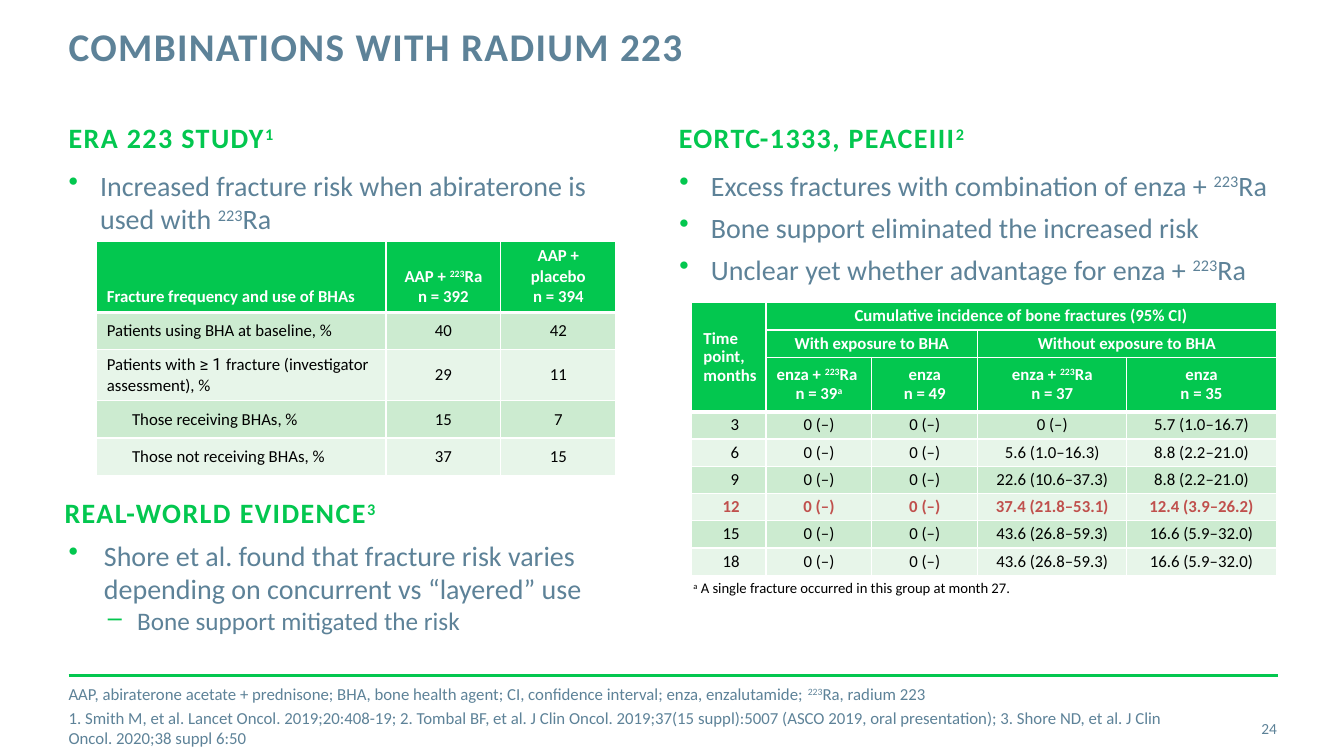
"""Build the slide on combinations with radium 223."""
from lxml import etree
from pptx import Presentation
from pptx.dml.color import RGBColor
from pptx.enum.shapes import MSO_CONNECTOR
from pptx.enum.text import MSO_ANCHOR, PP_ALIGN
from pptx.oxml.ns import qn
from pptx.util import Pt

GREEN = RGBColor(0x03, 0xC7, 0x4F)
SLATE = RGBColor(0x5D, 0x82, 0x98)
RED = RGBColor(0xC0, 0x50, 0x4D)
WHITE = RGBColor(0xFF, 0xFF, 0xFF)
BLACK = RGBColor(0, 0, 0)
BANDS = (RGBColor(0xCC, 0xEB, 0xD0), RGBColor(0xE7, 0xF5, 0xE9))
LEFT, CENTER, RIGHT = PP_ALIGN.LEFT, PP_ALIGN.CENTER, PP_ALIGN.RIGHT
TOP, MIDDLE, BOTTOM = MSO_ANCHOR.TOP, MSO_ANCHOR.MIDDLE, MSO_ANCHOR.BOTTOM
STRAIGHT = MSO_CONNECTOR.STRAIGHT

ERA_ROWS = [
    ["Fracture frequency and use of BHAs", "AAP + |^223|Ra\nn = 392", "AAP + placebo\nn = 394"],
    ["Patients using BHA at baseline, %", "40", "42"],
    ["Patients with |≥ 1 |fracture (investigator assessment), %", "29", "11"],
    ["Those receiving BHAs, %", "15", "7"],
    ["Those not receiving BHAs, %", "37", "15"],
]
NONE = "0 (–)"
PEACE_ROWS = [
    ["Time point, months", "Cumulative incidence of bone fractures (95% CI)", "", "", ""],
    ["", "With exposure to BHA", "", "Without exposure to BHA", ""],
    ["", "enza + |^223|Ra |\v|n = 39|^a", "enza|\v|n = 49",
     "enza + |^223|Ra|\v|n = 37", "enza|\v|n = 35"],
    ["3", NONE, NONE, NONE, "5.7 (1.0–16.7)"],
    ["6", NONE, NONE, "5.6 (1.0–16.3)", "8.8 (2.2–21.0)"],
    ["9", NONE, NONE, "22.6 (10.6–37.3)", "8.8 (2.2–21.0)"],
    ["12", NONE, NONE, "37.4 (21.8–53.1)", "12.4 (3.9–26.2)"],
    ["15", NONE, NONE, "43.6 (26.8–59.3)", "16.6 (5.9–32.0)"],
    ["18", NONE, NONE, "43.6 (26.8–59.3)", "16.6 (5.9–32.0)"],
    ["^a| A single fracture occurred in this group at month 27.", "", "", "", ""],
]


def write_runs(p, text, size, color, bold=False, spacing=0):
    """Fill a paragraph from parts split by |, where ^ raises a part and \\v breaks the line."""
    for part in text.split("|"):
        if part == "\v":
            p.add_line_break()
            continue
        r = p.add_run()
        r.text = part.lstrip("^")
        r.font.name = "Roboto" if part.startswith("≥") else "Calibri"
        r.font.size, r.font.bold = Pt(size), bold
        r.font.color.rgb = color
        rpr = r.font._element
        if part.startswith("^"):
            rpr.set("baseline", "30000")
        if spacing:
            rpr.set("spc", str(spacing * 100))


def indent(p, left, hanging=0):
    """Set the left margin and hanging indent of a paragraph."""
    ppr = p._p.get_or_add_pPr()
    ppr.set("marL", str(Pt(left)))
    ppr.set("indent", str(-Pt(hanging)))


def add_bullet(p, char, left, hanging):
    """Give a paragraph a green bullet."""
    indent(p, left, hanging)
    ppr = p._p.get_or_add_pPr()
    color = etree.SubElement(ppr, qn("a:buClr"))
    etree.SubElement(color, qn("a:srgbClr"), val=str(GREEN))
    etree.SubElement(ppr, qn("a:buChar"), char=char)


def add_text(s, frame, lines, size, color, bold=False, spacing=0, gap=0,
             align=LEFT, anchor=TOP, margin=0):
    """Add a text box and return its paragraphs."""
    tf = s.shapes.add_textbox(*map(Pt, frame)).text_frame
    tf.word_wrap, tf.vertical_anchor = True, anchor
    tf.margin_left = tf.margin_right = 0
    tf.margin_top = tf.margin_bottom = Pt(margin)
    for i, line in enumerate(lines):
        p = tf.add_paragraph() if i else tf.paragraphs[0]
        p.alignment = align
        if i and gap:
            p.space_before = Pt(gap)
        write_runs(p, line, size, color, bold, spacing)
    return tf.paragraphs


def add_heading(s, frame, text):
    """Add a green section heading."""
    add_text(s, frame, [text], 20, GREEN, True, 1)


def add_bullets(s, frame, lines):
    """Add a list of main points."""
    for p in add_text(s, frame, lines, 20, SLATE, gap=6):
        add_bullet(p, "•", 22.5, 22.5)


def set_borders(cell, top, bottom):
    """Draw white borders round a cell."""
    tcpr = cell._tc.get_or_add_tcPr()
    for side, width in (("L", 1), ("R", 1), ("T", top), ("B", bottom)):
        ln = etree.SubElement(tcpr, qn("a:ln" + side), w=str(Pt(width)))
        fill = etree.SubElement(ln, qn("a:solidFill"))
        etree.SubElement(fill, qn("a:srgbClr"), val=str(WHITE))


def add_grid(s, frame, widths, heights, rows, heads, head_anchor=MIDDLE, line=1.0,
             margins=(7.2, 3.6), accent=None):
    """Add a table with green header rows and banded body rows."""
    table = s.shapes.add_table(len(rows), len(widths), *map(Pt, frame)).table
    table.first_row = table.horz_banding = False
    for col, width in zip(table.columns, widths):
        col.width = Pt(width)
    for i, (row, height) in enumerate(zip(rows, heights)):
        table.rows[i].height = Pt(height)
        head = i < heads
        marked = row[0] == accent
        color = WHITE if head else RED if marked else BLACK
        for j, text in enumerate(row):
            cell = table.cell(i, j)
            set_borders(cell, 3 if i == heads else 1, 3 if i == heads - 1 else 1)
            cell.fill.solid()
            cell.fill.fore_color.rgb = GREEN if head else BANDS[(i - heads) % 2]
            cell.vertical_anchor = head_anchor if head else MIDDLE
            cell.margin_left = cell.margin_right = Pt(margins[0])
            cell.margin_top = cell.margin_bottom = Pt(margins[1])
            for k, part in enumerate(text.split("\n")):
                tf = cell.text_frame
                p = tf.add_paragraph() if k else tf.paragraphs[0]
                p.alignment = CENTER if j else LEFT
                p.line_spacing = line
                write_runs(p, part, 12, color, head or marked)
    return table


def add_era_table(s):
    """Add the fracture frequency table."""
    table = add_grid(s, (69.1, 172.1, 370.8, 166.3), (206.6, 82.1, 82.1),
                     [34.6] + [26.6] * 4, ERA_ROWS, 1, BOTTOM)
    for i in (3, 4):
        indent(table.cell(i, 0).text_frame.paragraphs[0], 18)


def add_peace_table(s):
    """Add the cumulative incidence table."""
    heights = [19.5, 19.5, 37.4] + [19.5] * 7
    table = add_grid(s, (493.9, 216.2, 417.6, sum(heights)), (53.3, 75.6, 75.6, 106.6, 106.6),
                     heights, PEACE_ROWS, 3, line=0.9, margins=(1.4, 0), accent="12")
    for i in range(3, 9):
        left = 26.6 if len(PEACE_ROWS[i][0]) == 1 else 20.9
        indent(table.cell(i, 0).text_frame.paragraphs[0], left)
    table.cell(0, 0).margin_left = Pt(8.6)
    note = table.cell(9, 0)
    note.fill.background()
    for r in note.text_frame.paragraphs[0].runs:
        r.font.size = Pt(10.5)
    for first, last in (((0, 0), (2, 0)), ((0, 1), (0, 4)), ((1, 1), (1, 2)),
                        ((1, 3), (1, 4)), ((9, 0), (9, 4))):
        table.cell(*first).merge(table.cell(*last))


def add_rule(s):
    """Add the green line above the footer."""
    line = s.shapes.add_connector(STRAIGHT, Pt(49), Pt(482.4), Pt(913), Pt(482.4))
    line.line.color.rgb, line.line.width = GREEN, Pt(2)
    etree.SubElement(line._element.spPr, qn("a:effectLst"))


def main():
    """Build and save the slide."""
    prs = Presentation()
    prs.slide_width, prs.slide_height = Pt(960), Pt(540)
    s = prs.slides.add_slide(prs.slide_layouts[6])
    add_rule(s)
    add_era_table(s)
    add_bullets(s, (49, 120.2, 408.2, 56.2),
                ["Increased fracture risk when abiraterone is used with |^223|Ra"])
    add_bullets(s, (485.3, 120.2, 445, 284.4),
                ["Excess fractures with combination of enza + |^223|Ra",
                 "Bone support eliminated the increased risk",
                 "Unclear yet whether advantage for enza + |^223|Ra"])
    add_heading(s, (484.9, 86.4, 409, 28.1), "EORTC-1333, PEACEIII|^2")
    add_heading(s, (49, 86.4, 409, 28.1), "ERA 223 STUDY|^1")
    title = add_text(s, (49, 19.4, 688.3, 63.4), ["COMBINATIONS WITH RADIUM 223"],
                     28, SLATE, True, 1)
    title[0].line_spacing = Pt(30)
    add_text(s, (850.3, 506.2, 61.9, 28.8), ["24"], 11, SLATE, align=RIGHT, anchor=MIDDLE)
    add_text(s, (49, 496.8, 782.6, 28.8),
             ["AAP, abiraterone acetate + prednisone; BHA, bone health agent; CI, confidence "
              "interval; enza, enzalutamide; |^223|Ra, radium 223",
              "1. Smith M, et al. Lancet Oncol. 2019;20:408-19; 2. Tombal BF, et al. J Clin Oncol. "
              "2019;37(15 suppl):5007 (ASCO 2019, oral presentation); 3. Shore ND, et al. J Clin "
              "Oncol. 2020;38 suppl 6:50"], 12, SLATE, gap=3, anchor=MIDDLE)
    add_peace_table(s)
    finding, detail = add_text(
        s, (49, 380.9, 425.5, 79.9),
        ["Shore et al. found that fracture risk varies depending on concurrent vs “layered” use",
         "Bone support mitigated the risk"], 20, SLATE, margin=3.6)
    add_bullet(finding, "•", 25.2, 25.2)
    detail.level = 1
    add_bullet(detail, "–", 49, 20.9)
    detail.runs[0].font.size = Pt(18)
    add_heading(s, (46.1, 354.2, 409, 31), "REAL-WORLD EVIDENCE|^3")
    prs.save("out.pptx")


if __name__ == "__main__":
    main()
